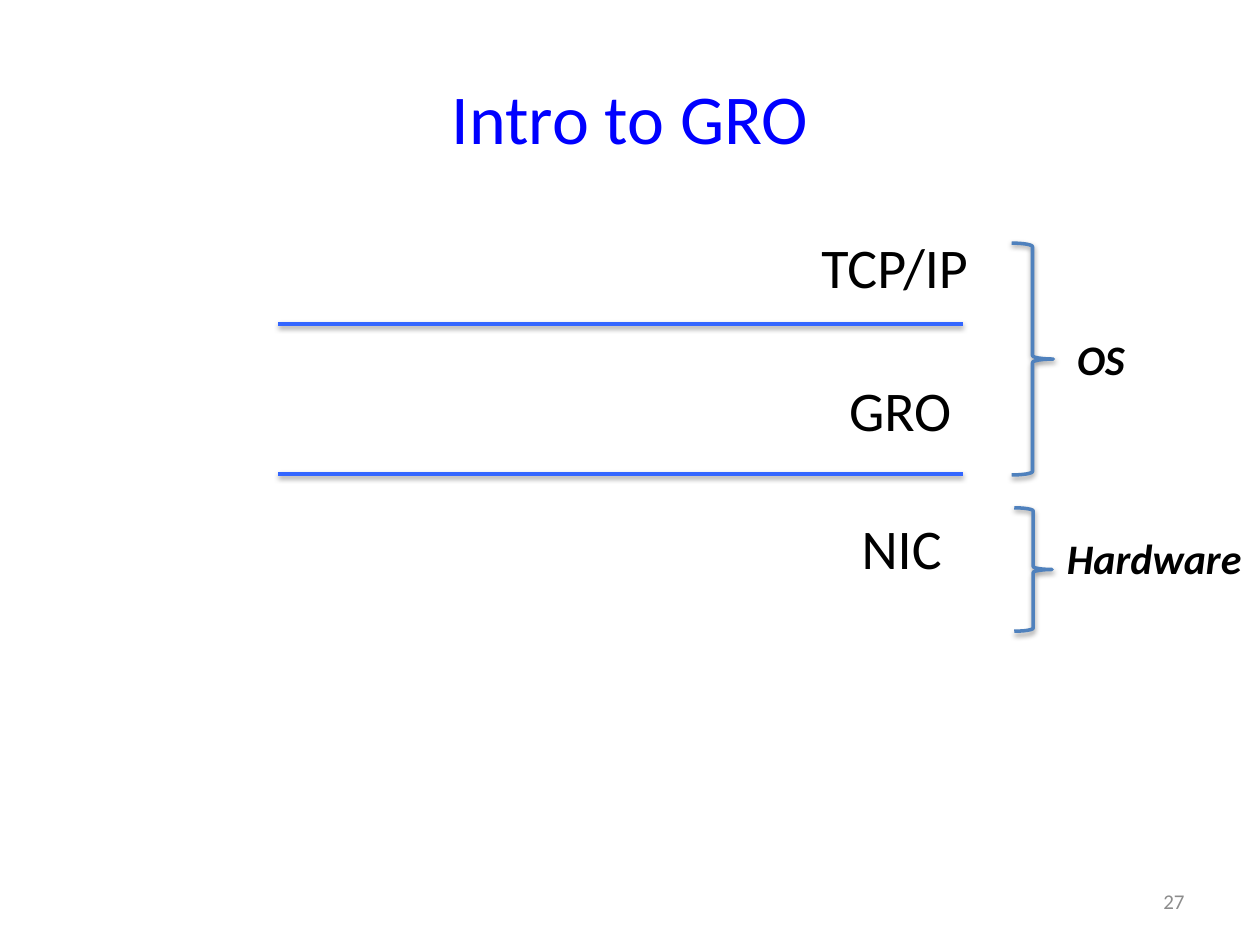
from dataclasses import dataclass

from lxml.etree import SubElement
from pptx import Presentation
from pptx.dml.color import RGBColor
from pptx.enum.shapes import MSO_CONNECTOR, MSO_SHAPE
from pptx.enum.text import MSO_ANCHOR, MSO_AUTO_SIZE, PP_ALIGN
from pptx.oxml.ns import qn
from pptx.util import Inches, Pt


@dataclass(frozen=True)
class Theme:
    """Colours, font and type sizes of the slide."""
    font: str = "Calibri"
    title: RGBColor = RGBColor(0x00, 0x00, 0xFF)
    text: RGBColor = RGBColor(0x00, 0x00, 0x00)
    muted: RGBColor = RGBColor(0x8C, 0x8C, 0x8C)
    divider: RGBColor = RGBColor(0x33, 0x66, 0xFF)
    brace: RGBColor = RGBColor(0x4F, 0x81, 0xBD)
    title_size: int = 40
    layer_size: int = 32
    group_size: int = 24
    number_size: int = 12
    line_width: int = 2


THEME = Theme()


def place(sp, left, top, width, height):
    """Move and size a shape in inches."""
    sp.left, sp.top = Inches(left), Inches(top)
    sp.width, sp.height = Inches(width), Inches(height)


def write(tf, text, size, color, align=PP_ALIGN.LEFT, emphasis=None):
    """Set and format one paragraph of text."""
    tf.text = text
    p = tf.paragraphs[0]
    p.alignment = align
    font = p.runs[0].font
    font.name, font.size = THEME.font, Pt(size)
    font.color.rgb = color
    font.bold = font.italic = emphasis


def add_label(s, box, text, size, wrap=False, emphasis=None):
    """Add a text box that grows with its text."""
    tf = s.shapes.add_textbox(*map(Inches, box)).text_frame
    write(tf, text, size, THEME.text, emphasis=emphasis)
    tf.word_wrap = wrap
    tf.auto_size = MSO_AUTO_SIZE.SHAPE_TO_FIT_TEXT


def stroke(sp, color):
    """Give a shape its line and a soft shadow below it."""
    sp.line.color.rgb = color
    sp.line.width = Pt(THEME.line_width)
    effects = SubElement(sp._element.spPr, qn("a:effectLst"))
    shadow = SubElement(effects, qn("a:outerShdw"), blurRad=str(Pt(3.1)),
                        dist=str(Pt(1.6)), dir="5400000", rotWithShape="0")
    black = SubElement(shadow, qn("a:srgbClr"), val="000000")
    SubElement(black, qn("a:alpha"), val="38000")


def add_title(s, box, text):
    """Place and format the title placeholder."""
    title = s.shapes.title
    place(title, *box)
    write(title.text_frame, text, THEME.title_size, THEME.title, PP_ALIGN.CENTER)
    title.text_frame.vertical_anchor = MSO_ANCHOR.MIDDLE


def add_layers(s, box, layers, dividers):
    """Draw the stack of layer names and the lines between them."""
    left, top, width, height = box
    for y in dividers:
        line = s.shapes.add_connector(
            MSO_CONNECTOR.STRAIGHT, Inches(left), Inches(top + y),
            Inches(left + width), Inches(top + y))
        stroke(line, THEME.divider)
    for text, x, y, label_width in layers:
        add_label(s, (left + x, top + y, label_width, 0.64), text, THEME.layer_size)


def add_group(s, box, text, label_box, wrap):
    """Draw a brace in the box and its label beside it."""
    left, top, width, height = box
    x, y, label_width, label_height = label_box
    brace = s.shapes.add_shape(MSO_SHAPE.RIGHT_BRACE, *map(Inches, box))
    brace.fill.background()
    stroke(brace, THEME.brace)
    add_label(s, (left + x, top + y, label_width, label_height), text,
              THEME.group_size, wrap, emphasis=True)


def add_slide_number(s, box, number):
    """Write the slide number at the lower right."""
    tf = s.shapes.add_textbox(*map(Inches, box)).text_frame
    write(tf, number, THEME.number_size, THEME.muted, PP_ALIGN.RIGHT)
    tf.word_wrap = True
    tf.vertical_anchor = MSO_ANCHOR.MIDDLE


def main():
    """Build and save the slide."""
    prs = Presentation()
    prs.slide_width, prs.slide_height = Inches(10), Inches(7.5)
    s = prs.slides.add_slide(prs.slide_layouts[5])
    add_title(s, (0.5, 0.3, 9, 1.25), "Intro to GRO")
    layers = [("TCP/IP", 4.21, 0, 1.41), ("GRO", 4.43, 1.13, 1.03),
              ("NIC", 4.53, 2.23, 0.84)]
    add_layers(s, (2.21, 1.8, 5.43, 2.87), layers, dividers=(0.77, 1.96))
    add_group(s, (8.03, 1.93, 0.33, 1.84), "OS", (0.42, 0.67, 0.66, 0.5), wrap=False)
    add_group(s, (8.05, 4.03, 0.3, 0.98), "Hardware", (0.32, 0.15, 1.7, 0.5), wrap=True)
    add_slide_number(s, (7.17, 6.95, 2.33, 0.4), "27")
    prs.save("out.pptx")


if __name__ == "__main__":
    main()
